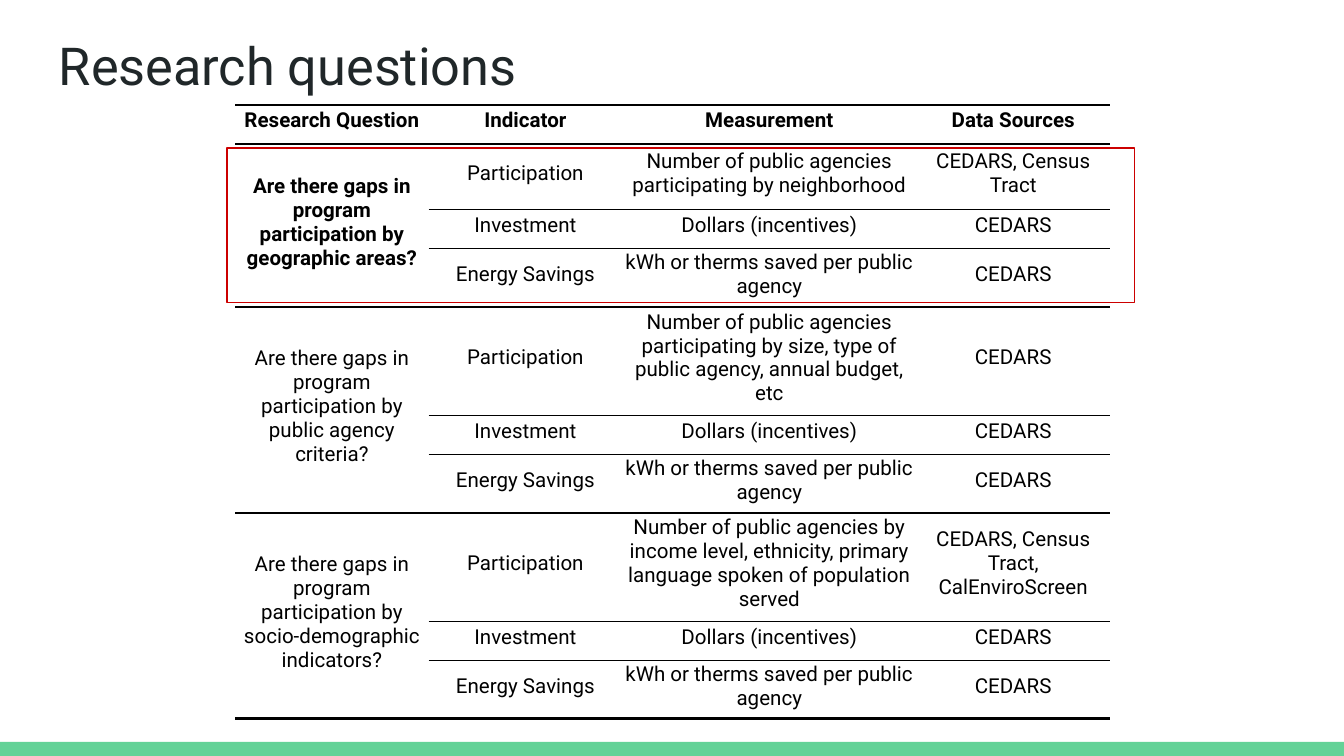
from dataclasses import dataclass

from lxml import etree
from pptx import Presentation
from pptx.dml.color import RGBColor
from pptx.enum.shapes import MSO_SHAPE
from pptx.enum.text import MSO_ANCHOR, PP_ALIGN
from pptx.oxml.ns import qn
from pptx.slide import Slide
from pptx.table import Table, _Cell
from pptx.util import Inches, Pt

RECTANGLE = MSO_SHAPE.RECTANGLE
MIDDLE = MSO_ANCHOR.MIDDLE
CENTER = PP_ALIGN.CENTER


@dataclass(frozen=True)
class Theme:
    font: str = "Roboto"
    title_size: float = 28
    table_size: float = 11
    title: str = "202729"
    ink: str = "000000"
    footer: str = "63D297"
    highlight: str = "CC0000"
    thin: float = 0.5
    medium: float = 1
    thick: float = 1.5


@dataclass(frozen=True)
class Question:
    text: str
    measurement: str
    sources: str
    first_row_height: float
    bold: bool = False

    def indicators(self) -> list[tuple[str, str, str]]:
        return [
            ("Participation", self.measurement, self.sources),
            ("Investment", "Dollars (incentives)", "CEDARS"),
            ("Energy Savings", "kWh or therms saved per public agency", "CEDARS"),
        ]


THEME = Theme()
SLIDE_WIDTH = 10
SLIDE_HEIGHT = SLIDE_WIDTH * 9 / 16
HEADERS = ("Research Question", "Indicator", "Measurement", "Data Sources")
COLUMN_WIDTHS = (1.44, 1.44, 2.19, 1.44)
ROW_HEIGHT = 0.29
LAST_ROW_HEIGHT = 0.31
QUESTIONS = (
    Question(
        "Are there gaps in program participation by geographic areas?",
        "Number of public agencies participating by neighborhood",
        "CEDARS, Census Tract", 0.49, bold=True,
    ),
    Question(
        "Are there gaps in program participation by public agency criteria?",
        "Number of public agencies participating by size, type of public agency, "
        "annual budget, etc",
        "CEDARS", 0.69,
    ),
    Question(
        "Are there gaps in program participation by socio-demographic indicators?",
        "Number of public agencies by income level, ethnicity, primary language "
        "spoken of population served",
        "CEDARS, Census Tract, CalEnviroScreen", 0.69,
    ),
)


def set_borders(cell: _Cell, top: float, bottom: float) -> None:
    """Rule the cell above and below; a width of 0 and both sides stay unruled."""
    properties = cell._tc.get_or_add_tcPr()
    for tag, width in (("a:lnL", 0), ("a:lnR", 0), ("a:lnT", top), ("a:lnB", bottom)):
        line = etree.SubElement(properties, qn(tag), w=str(Pt(width)))
        if width:
            fill = etree.SubElement(line, qn("a:solidFill"))
            etree.SubElement(fill, qn("a:srgbClr"), val=THEME.ink)
        else:
            etree.SubElement(line, qn("a:noFill"))


def fill_cell(cell: _Cell, text: str, top: float, bottom: float,
              bold: bool = False) -> None:
    set_borders(cell, top, bottom)
    cell.fill.background()
    cell.vertical_anchor = MIDDLE
    cell.margin_left = cell.margin_right = cell.margin_top = Inches(0.01)
    cell.margin_bottom = Inches(0.06)
    cell.text = text
    paragraph = cell.text_frame.paragraphs[0]
    paragraph.alignment = CENTER
    font = paragraph.font
    font.name, font.size, font.bold = THEME.font, Pt(THEME.table_size), bold
    font.color.rgb = RGBColor.from_string(THEME.ink)


def fill_question(table: Table, start: int, question: Question,
                  top: float, bottom: float) -> None:
    """Fill three indicator rows beside one merged question cell."""
    rows = question.indicators()
    last = len(rows) - 1
    for offset, values in enumerate(rows):
        row = start + offset
        row_top = top if offset == 0 else THEME.thin
        row_bottom = bottom if offset == last else THEME.thin
        fill_cell(table.cell(row, 0), question.text if offset == 0 else "",
                  top if offset == 0 else 0,
                  bottom if offset in (0, last) else 0, question.bold)
        for column, value in enumerate(values, 1):
            fill_cell(table.cell(row, column), value, row_top, row_bottom)
    table.cell(start, 0).merge(table.cell(start + last, 0))
    table.rows[start].height = Inches(question.first_row_height)


def add_question_table(slide: Slide) -> None:
    row_count = 1 + sum(len(question.indicators()) for question in QUESTIONS)
    table = slide.shapes.add_table(
        row_count, len(HEADERS), Inches(1.75), Inches(0.78),
        Inches(sum(COLUMN_WIDTHS)), Inches(row_count * ROW_HEIGHT),
    ).table
    table.first_row = table.horz_banding = False
    for column, width in zip(table.columns, COLUMN_WIDTHS):
        column.width = Inches(width)
    for row in table.rows:
        row.height = Inches(ROW_HEIGHT)
    table.rows[row_count - 1].height = Inches(LAST_ROW_HEIGHT)
    for column, header in enumerate(HEADERS):
        fill_cell(table.cell(0, column), header, THEME.thick, THEME.thick, bold=True)
    start, top = 1, THEME.thick
    for question in QUESTIONS:
        bottom = THEME.thick if question is QUESTIONS[-1] else THEME.medium
        fill_question(table, start, question, top, bottom)
        start += len(question.indicators())
        top = bottom


def add_title(slide: Slide, text: str) -> None:
    frame = slide.shapes.add_textbox(
        Inches(0.34), Inches(0.15), Inches(9.32), Inches(0.63)).text_frame
    frame.word_wrap = True
    frame.margin_left = frame.margin_right = Inches(0.1)
    frame.margin_top = frame.margin_bottom = Inches(0.1)
    frame.text = text
    font = frame.paragraphs[0].font
    font.name, font.size = THEME.font, Pt(THEME.title_size)
    font.color.rgb = RGBColor.from_string(THEME.title)


def add_footer_bar(slide: Slide) -> None:
    bar = slide.shapes.add_shape(
        RECTANGLE, Inches(0), Inches(5.52), Inches(SLIDE_WIDTH), Inches(0.11))
    bar.shadow.inherit = False
    bar.fill.solid()
    bar.fill.fore_color.rgb = RGBColor.from_string(THEME.footer)
    bar.line.fill.background()


def add_highlight_frame(slide: Slide) -> None:
    frame = slide.shapes.add_shape(
        RECTANGLE, Inches(1.69), Inches(1.1), Inches(6.75), Inches(1.15))
    frame.shadow.inherit = False
    frame.fill.background()
    frame.line.color.rgb = RGBColor.from_string(THEME.highlight)
    frame.line.width = Pt(0.75)


def main() -> None:
    presentation = Presentation()
    presentation.slide_width = Inches(SLIDE_WIDTH)
    presentation.slide_height = Inches(SLIDE_HEIGHT)
    slide = presentation.slides.add_slide(presentation.slide_layouts[6])
    add_footer_bar(slide)
    add_title(slide, "Research questions")
    add_question_table(slide)
    add_highlight_frame(slide)
    presentation.save("out.pptx")


if __name__ == "__main__":
    main()
